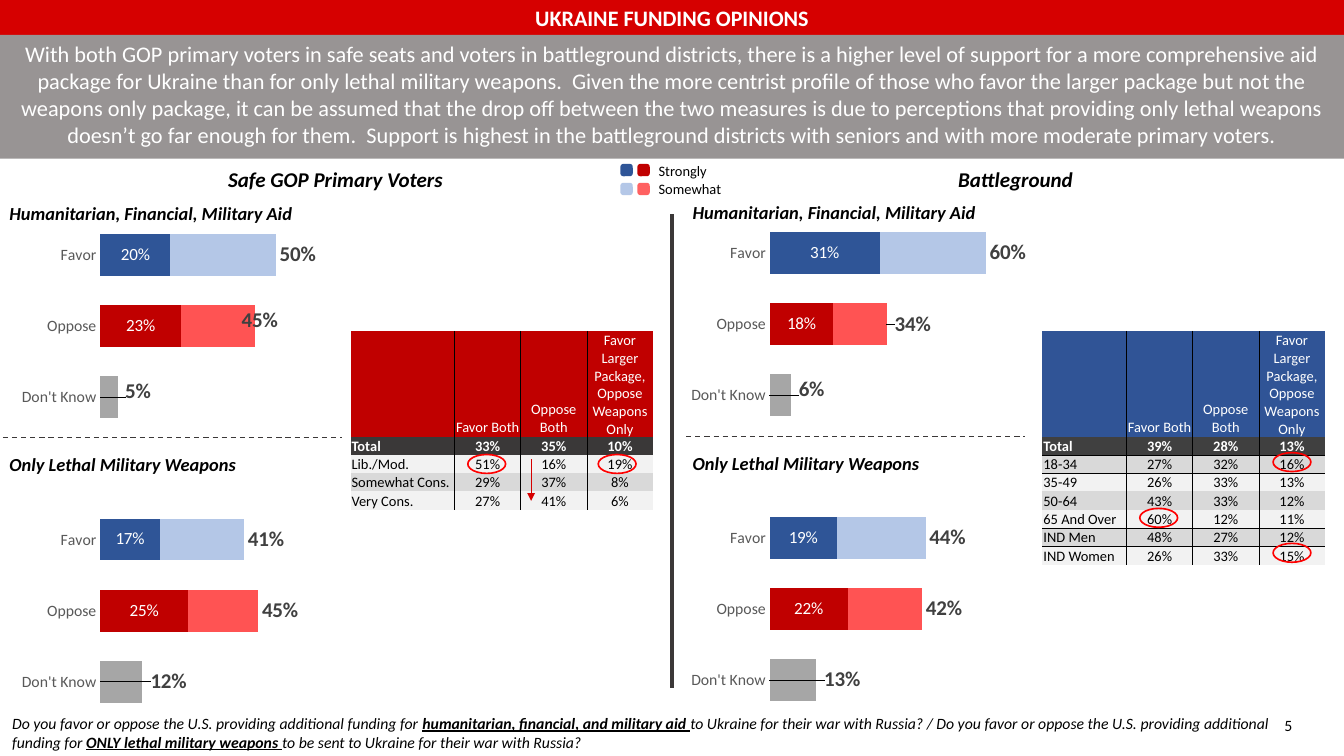
from dataclasses import dataclass

from lxml import etree
from pptx import Presentation
from pptx.chart.data import CategoryChartData
from pptx.dml.color import RGBColor
from pptx.enum.chart import XL_CHART_TYPE, XL_LABEL_POSITION, XL_TICK_MARK
from pptx.enum.dml import MSO_LINE
from pptx.enum.shapes import MSO_CONNECTOR, MSO_SHAPE
from pptx.enum.text import MSO_ANCHOR, MSO_AUTO_SIZE, PP_ALIGN
from pptx.oxml import parse_xml
from pptx.oxml.ns import nsdecls, qn
from pptx.util import Inches, Pt

LEFT, CENTER = PP_ALIGN.LEFT, PP_ALIGN.CENTER
CENTERED, INSIDE_BASE = XL_LABEL_POSITION.CENTER, XL_LABEL_POSITION.INSIDE_BASE
FONT = "Calibri"
NO_GRID_STYLE = "{2D5ABB26-0587-4C30-8999-92F81FD0307C}"
COLORS = {
    "black": "000000", "white": "FFFFFF", "red": "D60000", "banner": "989494",
    "rule": "3B3838", "circle": "FF0000", "strong_favor": "2F5597",
    "some_favor": "B4C7E7", "strong_oppose": "C00000", "some_oppose": "FF5353",
    "legend_oppose": "FF6161", "unsure": "A6A6A6", "axis": "595959",
    "total": "404040", "safe_total": "3A3838", "battle_head": "305496",
    "light": "F2F2F2", "dark": "D9D9D9",
}
CATEGORIES = ["Don't Know", "Oppose", "Favor", "", "Don't Know", "Oppose", "Favor"]
FAVOR_POINTS, HIDDEN_POINTS = (2, 6), (1, 2, 5, 6)
TABLE_HEAD = ["", "Favor Both", "Oppose Both", "Favor Larger Package, Oppose Weapons Only"]
HEAD_HEIGHT, ROW_HEIGHT, VALUE_WIDTH = 1.12, 0.19, 0.7


@dataclass
class Panel:
    left: float
    top: float
    chart_left: float
    chart_top: float
    plot_x: float
    plot_width: float
    strongly: list
    somewhat: list
    totals: list
    label_shifts: dict


@dataclass
class Crosstab:
    left: float
    label_width: float
    head_color: str
    total_color: str
    first_band: str
    second_band: str
    rows: list
    ruled_rows: tuple = ()


PANELS = [
    Panel(0, 2.09, 0, 2.17, 0.236, 0.663,
          [None, 0.25, 0.17, None, None, 0.23, 0.2],
          [None, 0.2, 0.24, None, None, 0.21, 0.3],
          [0.12, 0.45, 0.41, None, 0.05, 0.45, 0.5],
          {0: (0.11, 0), 4: (0.05, -0.01), 5: (-0.04, -0.01)}),
    Panel(7.23, 2.08, 7.11, 2.15, 0.23, 0.669,
          [None, 0.22, 0.19, None, None, 0.18, 0.31],
          [None, 0.21, 0.25, None, None, 0.15, 0.3],
          [0.13, 0.42, 0.44, None, 0.06, 0.34, 0.6],
          {0: (0.12, 0), 4: (0.06, -0.01), 5: (0.01, 0)}),
]
CROSSTABS = [
    Crosstab(3.71, 1.1, "strong_oppose", "safe_total", "light", "dark", [
        ["Total", "33%", "35%", "10%"], ["Lib./Mod.", "51%", "16%", "19%"],
        ["Somewhat Cons.", "29%", "37%", "8%"], ["Very Cons.", "27%", "41%", "6%"]]),
    Crosstab(11.03, 0.89, "battle_head", "total", "dark", "light", [
        ["Total", "39%", "28%", "13%"], ["18-34", "27%", "32%", "16%"],
        ["35-49", "26%", "33%", "13%"], ["50-64", "43%", "33%", "12%"],
        ["65 And Over", "60%", "12%", "11%"], ["IND Men", "48%", "27%", "12%"],
        ["IND Women", "26%", "33%", "15%"]], (1, 5)),
]
CIRCLES = [(6.33, 4.81), (13.47, 4.79), (13.47, 5.75), (12.06, 5.38), (4.95, 4.81)]
QUESTION = [
    ("Do you favor or oppose the U.S. providing additional funding for ", False),
    ("humanitarian, financial, and military aid ", True),
    ("to Ukraine for their war with Russia? / Do you favor or oppose the U.S. "
     "providing additional funding for ", False),
    ("ONLY lethal military weapons ", True),
    ("to be sent to Ukraine for their war with Russia?", False),
]
SUMMARY = (
    "With both GOP primary voters in safe seats and voters in battleground districts, there is a "
    "higher level of support for a more comprehensive aid package for Ukraine than for only lethal "
    "military weapons.  Given the more centrist profile of those who favor the larger package but "
    "not the weapons only package, it can be assumed that the drop off between the two measures is "
    "due to perceptions that providing only lethal weapons doesn’t go far enough for them.  Support "
    "is highest in the battleground districts with seniors and with more moderate primary voters.")


def rgb(name: str) -> RGBColor:
    return RGBColor.from_string(COLORS[name])


def paint(target, color: str) -> None:
    target.fill.solid()
    target.fill.fore_color.rgb = rgb(color)


def style(font, size: float, color: str = "black", bold: bool = False, italic: bool = False) -> None:
    font.name, font.size, font.bold, font.italic = FONT, Pt(size), bold, italic
    font.color.rgb = rgb(color)


def box(left: float, top: float, width: float, height: float) -> tuple:
    return Inches(left), Inches(top), Inches(width), Inches(height)


def add_text(slide, place: tuple, lines: list, size: float, emphasis: bool = False, align=LEFT):
    frame = slide.shapes.add_textbox(*box(*place)).text_frame
    frame.word_wrap = True
    frame.text = "\n".join(lines)
    for paragraph in frame.paragraphs:
        paragraph.alignment = align
        style(paragraph.font, size, bold=emphasis, italic=emphasis)
    return frame


def add_shape(slide, kind, place: tuple, fill: str = "", line: str = "", weight: float = 1):
    shape = slide.shapes.add_shape(kind, *box(*place))
    shape.shadow.inherit = False
    if fill:
        paint(shape, fill)
    else:
        shape.fill.background()
    if line:
        shape.line.color.rgb = rgb(line)
        shape.line.width = Pt(weight)
    else:
        shape.line.fill.background()
    return shape


def add_line(slide, start: tuple, end: tuple, color: str, weight: float):
    line = slide.shapes.add_connector(MSO_CONNECTOR.STRAIGHT, *map(Inches, start + end))
    line.line.color.rgb = rgb(color)
    line.line.width = Pt(weight)
    etree.SubElement(line.element.spPr, qn("a:effectLst"))
    return line


def manual_layout(x: float, y: float, extra: str = ""):
    return parse_xml(f'<c:layout {nsdecls("c")}><c:manualLayout>{extra}<c:x val="{x}"/>'
                     f'<c:y val="{y}"/></c:manualLayout></c:layout>')


def show_labels(labels, position, size: float, color: str, bold: bool) -> None:
    labels.show_value = True
    labels.number_format, labels.number_format_is_linked = "0%", False
    labels.position = position
    style(labels.font, size, color, bold)


def add_opinion_chart(slide, panel: Panel) -> None:
    data = CategoryChartData(number_format="0%")
    data.categories = CATEGORIES
    for name, values in (("Strongly", panel.strongly), ("Somewhat", panel.somewhat),
                         ("Total", panel.totals)):
        data.add_series(name, values)
    chart = slide.shapes.add_chart(XL_CHART_TYPE.BAR_STACKED,
                                   *box(panel.chart_left, panel.chart_top, 4.49, 5.58), data).chart
    chart.has_legend = chart.has_title = False
    style(chart.font, 10)
    axis = chart.category_axis
    axis.major_tick_mark = axis.minor_tick_mark = XL_TICK_MARK.NONE
    axis.format.line.fill.background()
    style(axis.tick_labels.font, 12, "axis")
    scale = chart.value_axis
    scale.minimum_scale, scale.maximum_scale = 0, 0.8
    scale.has_major_gridlines = scale.visible = False
    plot = chart.plots[0]
    plot.gap_width, plot.overlap, plot.vary_by_categories = 70, 100, False

    strongly, somewhat, totals = plot.series
    for series, color, favor in ((strongly, "strong_oppose", "strong_favor"),
                                 (somewhat, "some_oppose", "some_favor")):
        paint(series.format, color)
        for index in FAVOR_POINTS:
            paint(series.points[index].format, favor)
    paint(totals.format, "unsure")
    for index in HIDDEN_POINTS:
        totals.points[index].format.fill.background()
    show_labels(strongly.data_labels, CENTERED, 13, "white", False)
    show_labels(totals.data_labels, INSIDE_BASE, 16, "total", True)
    for index, shift in panel.label_shifts.items():
        label = totals.points[index].data_label
        style(label.font, 16, "total", True)
        label.position = INSIDE_BASE
    for entry in totals.data_labels._element.findall(qn("c:dLbl")):
        index = entry.find(qn("c:idx"))
        index.addnext(manual_layout(*panel.label_shifts[int(index.get("val"))]))

    area = chart._chartSpace.find(".//" + qn("c:plotArea"))
    for old in area.findall(qn("c:layout")):
        area.remove(old)
    layout = manual_layout(panel.plot_x, 0.027, '<c:layoutTarget val="inner"/>'
                           '<c:xMode val="edge"/><c:yMode val="edge"/>')
    for side, value in (("w", panel.plot_width), ("h", 0.945)):
        etree.SubElement(layout[0], qn(f"c:{side}")).set("val", str(value))
    area.insert(0, layout)


def add_border(cell, side: str) -> None:
    cell._tc.get_or_add_tcPr().append(parse_xml(
        f'<a:ln{side} {nsdecls("a")} w="6350"><a:solidFill><a:srgbClr val="{COLORS["black"]}"/>'
        f'</a:solidFill></a:ln{side}>'))


def add_crosstab(slide, tab: Crosstab) -> None:
    rows = [TABLE_HEAD] + tab.rows
    widths = [tab.label_width] + [VALUE_WIDTH] * 3
    heights = [HEAD_HEIGHT] + [ROW_HEIGHT] * len(tab.rows)
    holder = slide.shapes.add_table(len(rows), len(widths),
                                    *box(tab.left, 3.5, sum(widths), sum(heights)))
    holder.element.find(".//" + qn("a:tableStyleId")).text = NO_GRID_STYLE
    table = holder.table
    for column, width in zip(table.columns, widths):
        column.width = Inches(width)
    for r, (row, height) in enumerate(zip(rows, heights)):
        table.rows[r].height = Inches(height)
        band = tab.second_band if r % 2 else tab.first_band
        fill = {0: tab.head_color, 1: tab.total_color}.get(r, band)
        for c, value in enumerate(row):
            cell = table.cell(r, c)
            cell.margin_left = cell.margin_right = cell.margin_top = Inches(0.01)
            cell.margin_bottom = 0
            cell.vertical_anchor = MSO_ANCHOR.BOTTOM
            sides = {"L": c > 0, "R": c < 3, "T": r - 1 in tab.ruled_rows, "B": r in tab.ruled_rows}
            for side, ruled in sides.items():
                if ruled:
                    add_border(cell, side)
            paint(cell, fill)
            cell.text = value
            paragraph = cell.text_frame.paragraphs[0]
            paragraph.alignment = CENTER if c else LEFT
            style(paragraph.font, 11, "white" if r < 2 else "black", r == 1)


def add_header(slide) -> None:
    title = slide.shapes.title
    title.left, title.top, title.width, title.height = box(0, 0, 14.22, 0.37)
    paint(title, "red")
    title.text_frame.text = "UKRAINE FUNDING OPINIONS"
    title.text_frame.auto_size = MSO_AUTO_SIZE.NONE
    title.text_frame.vertical_anchor = MSO_ANCHOR.MIDDLE
    banner = add_shape(slide, MSO_SHAPE.RECTANGLE, (0, 0.37, 14.22, 1.31), "banner")
    banner.text_frame.text = SUMMARY
    banner.text_frame.margin_top = Inches(0.06)
    banner.text_frame.vertical_anchor = MSO_ANCHOR.TOP
    for shape, size, bold in ((title, 16.8, True), (banner, 17, False)):
        paragraph = shape.text_frame.paragraphs[0]
        paragraph.alignment = CENTER
        style(paragraph.font, size, "white", bold)


def add_legend(slide) -> None:
    add_text(slide, (6.87, 1.67, 1.07, 0.47), ["Strongly", "Somewhat"], 11)
    swatches = (("strong_favor", "strong_oppose"), ("some_favor", "legend_oppose"))
    for r, colors in enumerate(swatches):
        for c, color in enumerate(colors):
            add_shape(slide, MSO_SHAPE.ROUNDED_RECTANGLE,
                      (6.58 + 0.18 * c, 1.75 + 0.2 * r, 0.1, 0.1), color, color, 2.25)


def add_question(slide) -> None:
    paragraph = add_text(slide, (0.03, 7.5, 13.53, 0.5), [""], 12).paragraphs[0]
    paragraph.font.italic = True
    for wording, stressed in QUESTION:
        run = paragraph.add_run()
        run.text = wording
        run.font.bold = run.font.underline = stressed


def main() -> None:
    deck = Presentation()
    deck.slide_width, deck.slide_height = Inches(14.22), Inches(8)
    slide = deck.slides.add_slide(deck.slide_layouts[5])
    add_header(slide)
    add_legend(slide)
    add_text(slide, (0, 1.71, 7.1, 0.37), ["Safe GOP Primary Voters"], 16, True, CENTER)
    add_text(slide, (10.04, 1.71, 1.47, 0.37), ["Battleground"], 16, True)
    add_line(slide, (7.11, 2.27), (7.11, 7.28), "rule", 3)
    for panel in PANELS:
        add_opinion_chart(slide, panel)
        add_text(slide, (panel.left, panel.top, 3.99, 0.34),
                 ["Humanitarian, Financial, Military Aid"], 14, True)
        add_text(slide, (panel.left, panel.top + 2.66, 3.65, 0.34),
                 ["Only Lethal Military Weapons"], 14, True)
        dash_left, dash_top = panel.left + 0.03, panel.top + 2.54
        divider = add_line(slide, (dash_left, dash_top), (dash_left + 3.59, dash_top), "rule", 1)
        divider.line.dash_style = MSO_LINE.DASH
    for tab in CROSSTABS:
        add_crosstab(slide, tab)
    trend = add_line(slide, (5.62, 4.86), (5.62, 5.3), "red", 0.5)
    etree.SubElement(trend.line._get_or_add_ln(), qn("a:tailEnd")).set("type", "triangle")
    for left, top in CIRCLES:
        add_shape(slide, MSO_SHAPE.OVAL, (left, top, 0.4, 0.2), line="circle", weight=1.25)
    add_question(slide)
    add_text(slide, (13.49, 7.53, 0.56, 0.3), ["5"], 12)
    deck.save("out.pptx")


if __name__ == "__main__":
    main()
